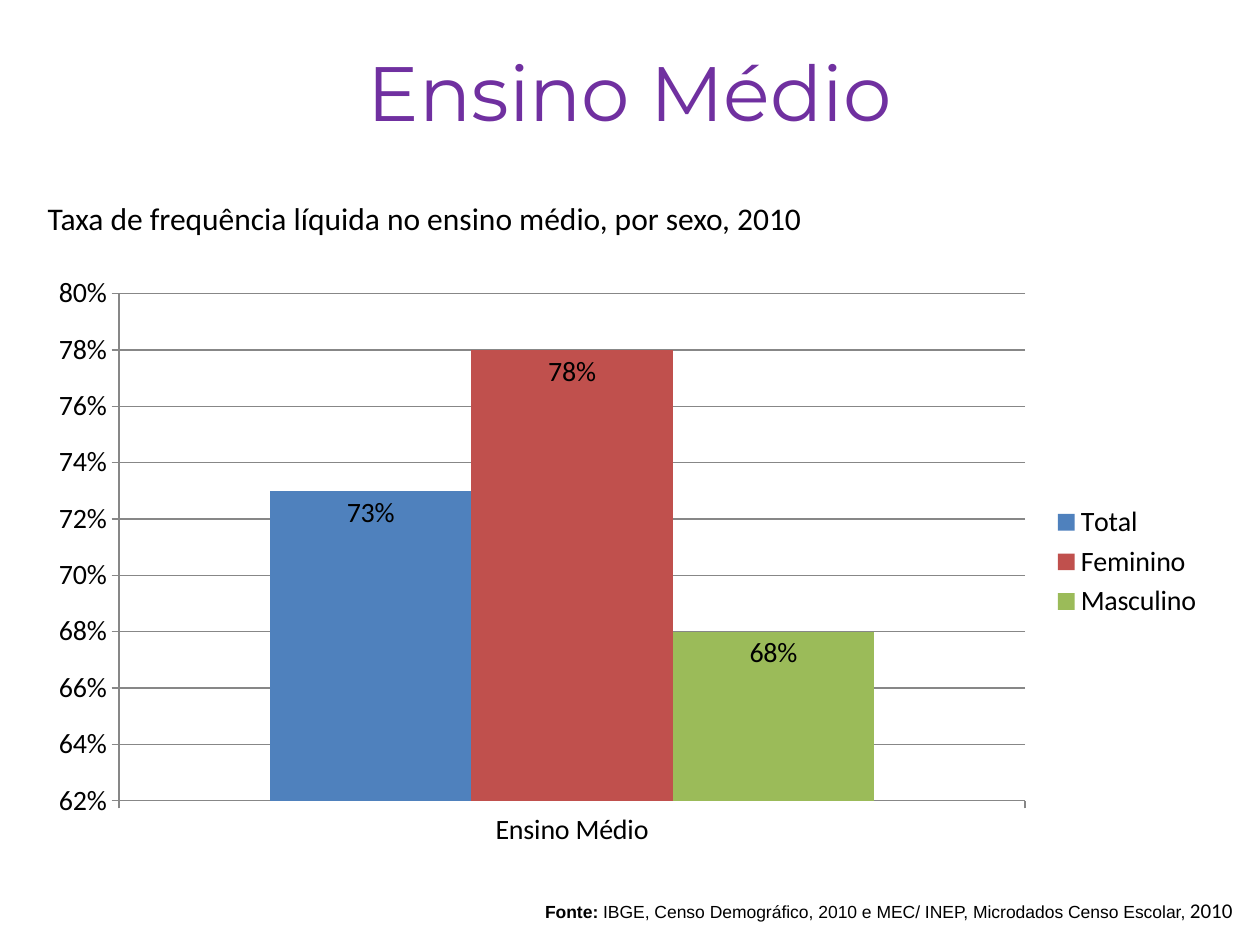
from pptx import Presentation
from pptx.chart.data import CategoryChartData
from pptx.dml.color import RGBColor
from pptx.enum.chart import (XL_CHART_TYPE as ChartType, XL_LABEL_POSITION as LabelPosition,
                             XL_LEGEND_POSITION as LegendPosition, XL_TICK_MARK as TickMark)
from pptx.enum.text import MSO_ANCHOR as Anchor, MSO_AUTO_SIZE as AutoSize, PP_ALIGN as Align
from pptx.util import Inches, Pt

BLACK = RGBColor(0x00, 0x00, 0x00)
PURPLE = RGBColor(0x70, 0x30, 0xA0)
GREY = RGBColor(0x87, 0x87, 0x87)
BLUE = RGBColor(0x4F, 0x81, 0xBD)
RED = RGBColor(0xC0, 0x50, 0x4D)
GREEN = RGBColor(0x9B, 0xBB, 0x59)

RATES = [("Total", 0.73, BLUE), ("Feminino", 0.78, RED), ("Masculino", 0.68, GREEN)]


def style_font(font, size, name="Calibri", color=BLACK, bold=False):
    font.size, font.name, font.bold = Pt(size), name, bold
    font.color.rgb = color


def add_span(para, text, size, **style):
    span = para.add_run()
    span.text = text
    style_font(span.font, size, **style)


def place_title(page, left, top, width, height):
    title = page.shapes.title
    title.left, title.top, title.width, title.height = left, top, width, height
    frame = title.text_frame
    frame.vertical_anchor = Anchor.TOP
    para = frame.paragraphs[0]
    para.alignment = Align.CENTER
    add_span(para, "Ensino Médio", 44, name="Montserrat", color=PURPLE)


def add_subtitle(page, left, top, width, height):
    frame = page.shapes.add_textbox(left, top, width, height).text_frame
    frame.word_wrap = True
    frame.auto_size = AutoSize.SHAPE_TO_FIT_TEXT
    add_span(frame.paragraphs[0],
             "Taxa de frequência líquida no ensino médio, por sexo, 2010", 18)


def add_source_note(page, left, top, width, height):
    frame = page.shapes.add_textbox(left, top, width, height).text_frame
    frame.word_wrap = False
    frame.auto_size = AutoSize.SHAPE_TO_FIT_TEXT
    frame.vertical_anchor = Anchor.MIDDLE
    para = frame.paragraphs[0]
    para.alignment = Align.RIGHT
    add_span(para, "Fonte: ", 10, name="Arial", bold=True)
    add_span(para, "IBGE, Censo Demográfico, 2010 e MEC/ INEP, Microdados Censo Escolar, ",
             10, name="Arial")
    add_span(para, "2010", 12)


def add_rate_chart(page, left, top, width, height):
    data = CategoryChartData(number_format="0%")
    data.categories = ["Ensino Médio"]
    for name, rate, _ in RATES:
        data.add_series(name, [rate])
    chart = page.shapes.add_chart(ChartType.COLUMN_CLUSTERED, left, top, width, height,
                                  data).chart
    style_font(chart.font, 16)
    chart.has_title = False
    chart.has_legend = True
    chart.legend.position = LegendPosition.RIGHT
    chart.legend.include_in_layout = False

    for axis in (chart.category_axis, chart.value_axis):
        axis.major_tick_mark = TickMark.CROSS if axis is None else TickMark.OUTSIDE
        axis.minor_tick_mark = TickMark.NONE
        axis.format.line.color.rgb = GREY
    rates = chart.value_axis
    rates.minimum_scale, rates.maximum_scale, rates.major_unit = 0.62, 0.8, 0.02
    rates.has_major_gridlines = True
    rates.major_gridlines.format.line.color.rgb = GREY
    rates.tick_labels.number_format = "0%"
    rates.tick_labels.number_format_is_linked = False

    plot = chart.plots[0]
    plot.gap_width, plot.overlap, plot.vary_by_categories = 150, 0, False
    for series, (_, _, color) in zip(plot.series, RATES):
        series.format.fill.solid()
        series.format.fill.fore_color.rgb = color
        labels = series.data_labels
        labels.show_value = True
        labels.position = LabelPosition.INSIDE_END
        labels.number_format = "0%"
        labels.number_format_is_linked = False
        style_font(labels.font, 16)


def main():
    deck = Presentation()
    deck.slide_width, deck.slide_height = Inches(10), Inches(7.5)
    page = deck.slides.add_slide(deck.slide_layouts.get_by_name("Title Only"))
    add_rate_chart(page, Inches(0.28), Inches(2.1), Inches(9.37), Inches(4.72))
    add_subtitle(page, Inches(0.28), Inches(1.53), Inches(9.72), Inches(0.4))
    add_source_note(page, Inches(4.06), Inches(7.07), Inches(5.82), Inches(0.3))
    place_title(page, Inches(0.5), Inches(0.3), Inches(9), Inches(1.25))
    deck.save("out.pptx")


if __name__ == "__main__":
    main()
